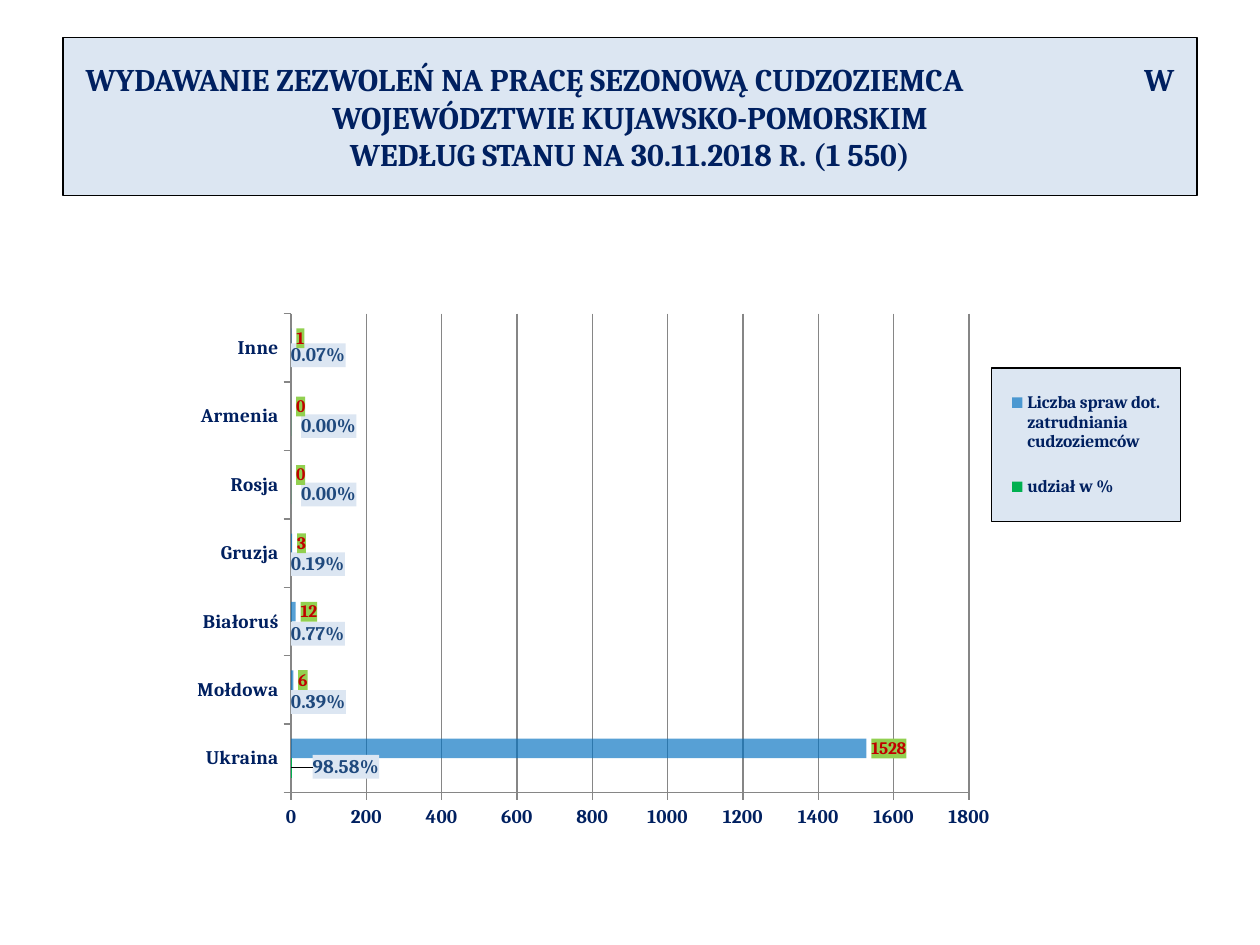
from copy import deepcopy

from lxml.etree import SubElement
from pptx import Presentation
from pptx.chart.data import CategoryChartData
from pptx.dml.color import RGBColor
from pptx.enum.chart import XL_CHART_TYPE, XL_LABEL_POSITION, XL_LEGEND_POSITION, XL_TICK_MARK
from pptx.enum.text import MSO_ANCHOR, MSO_AUTO_SIZE, PP_ALIGN
from pptx.oxml import parse_xml
from pptx.oxml.ns import nsdecls, qn
from pptx.util import Inches, Pt

NAVY = RGBColor(0x00, 0x20, 0x60)
PALE_BLUE = RGBColor(0xDC, 0xE6, 0xF2)
BLUE = RGBColor(0x00, 0x70, 0xC0)
GREEN = RGBColor(0x00, 0xB0, 0x50)
LIME = RGBColor(0x92, 0xD0, 0x50)
RED = RGBColor(0xC0, 0x00, 0x00)
SLATE = RGBColor(0x1F, 0x49, 0x7D)
GREY = RGBColor(0x86, 0x86, 0x86)
BLACK = RGBColor(0x00, 0x00, 0x00)

CHART_WIDTH, CHART_HEIGHT = 9, 4.52
TITLE_LINES = [
    ("WYDAWANIE ZEZWOLEŃ NA PRACĘ SEZONOWĄ CUDZOZIEMCA\tW", PP_ALIGN.LEFT),
    ("WOJEWÓDZTWIE KUJAWSKO-POMORSKIM", PP_ALIGN.CENTER),
    ("WEDŁUG STANU NA 30.11.2018 R. (1 550)", PP_ALIGN.CENTER),
]
COUNTRIES = ["Ukraina", "Mołdowa", "Białoruś", "Gruzja", "Rosja", "Armenia", "Inne"]
CASES = [1528, 6, 12, 3, 0, 0, 1]
SHARES = [0.9858, 0.0039, 0.0077, 0.0019, 0, 0, 0.0007]
SHARE_LABEL_SHIFTS = [(0.13, -0.01), (-0.04, 0.02), (-0.04, 0.02), (-0.04, 0.01),
                      (0.04, 0), (0.04, 0), (-0.04, -0.02)]


def style_font(font, size, color):
    """Apply the bold Cambria face in a size and colour."""
    font.name = "Cambria"
    font.size = Pt(size)
    font.bold = True
    font.color.rgb = color


def box_properties(fill, line=None):
    """Return chart shape properties with a solid fill and an optional outline."""
    outline = "<a:noFill/>"
    if line is not None:
        outline = f'<a:solidFill><a:srgbClr val="{line}"/></a:solidFill>'
    return parse_xml(
        f'<c:spPr {nsdecls("c", "a")}><a:solidFill><a:srgbClr val="{fill}"/></a:solidFill>'
        f'<a:ln w="9525">{outline}</a:ln></c:spPr>')


def manual_layout(left, top, width=None, height=None, inner=False):
    """Return a chart layout from lengths in inches."""
    layout = parse_xml(f'<c:layout {nsdecls("c")}><c:manualLayout/></c:layout>')
    values = []
    if inner:
        values.append(("layoutTarget", "inner"))
    if width is not None:
        values += [("xMode", "edge"), ("yMode", "edge")]
    values += [("x", left / CHART_WIDTH), ("y", top / CHART_HEIGHT)]
    if width is not None:
        values += [("w", width / CHART_WIDTH), ("h", height / CHART_HEIGHT)]
    for name, value in values:
        SubElement(layout[0], qn(f"c:{name}")).set("val", str(value))
    return layout


def add_title(page):
    """Fill and format the framed title."""
    box = page.shapes.title
    box.left, box.top, box.width, box.height = (Inches(n) for n in (0.5, 0.3, 9, 1.25))
    box.fill.solid()
    box.fill.fore_color.rgb = PALE_BLUE
    box.line.color.rgb = BLACK
    box.line.width = Pt(0.75)
    frame = box.text_frame
    frame.word_wrap = True
    frame.auto_size = MSO_AUTO_SIZE.NONE
    frame.vertical_anchor = MSO_ANCHOR.MIDDLE
    frame.margin_left = frame.margin_right = Inches(0.18)
    for index, (text, alignment) in enumerate(TITLE_LINES):
        para = frame.add_paragraph() if index else frame.paragraphs[0]
        para.alignment = alignment
        span = para.add_run()
        span.text = text
        style_font(span.font, 18, NAVY)
    tabs = SubElement(frame.paragraphs[0]._p.get_or_add_pPr(), qn("a:tabLst"))
    stop = SubElement(tabs, qn("a:tab"))
    stop.set("pos", str(Inches(8.4)))
    stop.set("algn", "l")


def style_axis(axis):
    """Format the labels, line and tick marks of an axis."""
    style_font(axis.tick_labels.font, 11, NAVY)
    axis.format.line.color.rgb = GREY
    axis.major_tick_mark = XL_TICK_MARK.OUTSIDE
    axis.minor_tick_mark = XL_TICK_MARK.NONE


def style_series(series, color, label_size, label_color, label_fill, number_format):
    """Colour a series and its value labels."""
    series.format.fill.solid()
    series.format.fill.fore_color.rgb = color
    series.invert_if_negative = False
    labels = series.data_labels
    labels.show_value = True
    labels.position = XL_LABEL_POSITION.OUTSIDE_END
    labels.number_format = number_format
    labels.number_format_is_linked = False
    style_font(labels.font, label_size, label_color)
    labels._element.find(qn("c:txPr")).addprevious(box_properties(label_fill))


def shift_labels(series, shifts):
    """Move each point label by its offset in inches."""
    labels = series.data_labels._element
    formats = [labels.find(qn(f"c:{name}")) for name in ("numFmt", "spPr", "txPr")]
    for index, shift in enumerate(shifts):
        series.points[index].data_label.position = XL_LABEL_POSITION.OUTSIDE_END
        label = labels.findall(qn("c:dLbl"))[index]
        for name in ("layout", "spPr", "txPr", "numFmt"):
            for old in label.findall(qn(f"c:{name}")):
                label.remove(old)
        parts = [manual_layout(*shift)] + [deepcopy(part) for part in formats]
        for position, part in enumerate(parts, 1):
            label.insert(position, part)


def add_legend(chart):
    """Place the framed legend at the right."""
    chart.has_legend = True
    legend = chart.legend
    legend.position = XL_LEGEND_POSITION.RIGHT
    legend.include_in_layout = False
    style_font(legend.font, 10, NAVY)
    element = legend._element
    for old in element.findall(qn("c:layout")):
        element.remove(old)
    element.find(qn("c:legendPos")).addnext(manual_layout(7.31, 0.67, 1.5, 1.22))
    element.find(qn("c:txPr")).addprevious(box_properties(PALE_BLUE, BLACK))


def add_permit_chart(page):
    """Add the bar chart of cases and shares by country."""
    data = CategoryChartData()
    data.categories = COUNTRIES
    data.add_series("Liczba spraw dot. zatrudniania cudzoziemców", CASES)
    data.add_series("udział w %", SHARES, "0.00%")
    chart = page.shapes.add_chart(
        XL_CHART_TYPE.BAR_CLUSTERED, Inches(0.56), Inches(2.25),
        Inches(CHART_WIDTH), Inches(CHART_HEIGHT), data).chart
    chart.has_title = False
    chart.font.name = "Calibri"
    chart.font.size = Pt(18)
    style_axis(chart.category_axis)
    values = chart.value_axis
    style_axis(values)
    values.minimum_scale, values.maximum_scale, values.major_unit = 0, 1800, 200
    values.tick_labels.number_format = "General"
    values.tick_labels.number_format_is_linked = False
    values.has_major_gridlines = True
    values.major_gridlines.format.line.color.rgb = GREY
    plot = chart.plots[0]
    plot.gap_width = 150
    plot.vary_by_categories = False
    cases, shares = plot.series
    style_series(cases, BLUE, 10, RED, LIME, "General")
    style_series(shares, GREEN, 11, SLATE, PALE_BLUE, "0.00%")
    shift_labels(shares, SHARE_LABEL_SHIFTS)
    fill = cases._element.find(qn("c:spPr")).find(qn("a:solidFill"))
    SubElement(fill[0], qn("a:alpha")).set("val", "66000")
    cases._element.addprevious(shares._element)
    add_legend(chart)
    area = chart._chartSpace.chart.plotArea
    for old in area.findall(qn("c:layout")):
        area.remove(old)
    area.insert(0, manual_layout(1.75, 0.24, 5.38, 3.8, inner=True))


def main():
    """Build and save the slide."""
    deck = Presentation()
    deck.slide_width, deck.slide_height = Inches(10), Inches(7.5)
    page = deck.slides.add_slide(deck.slide_layouts[5])
    add_title(page)
    add_permit_chart(page)
    deck.save("out.pptx")


if __name__ == "__main__":
    main()
